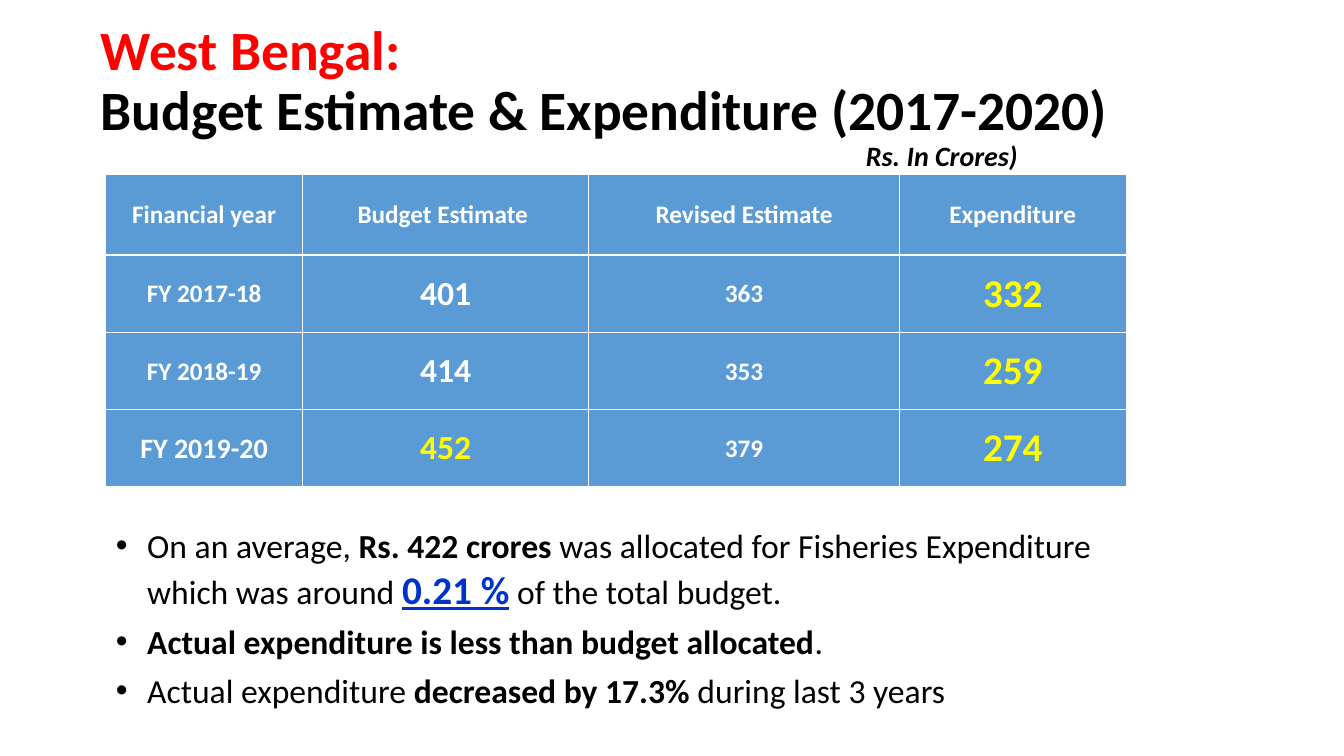
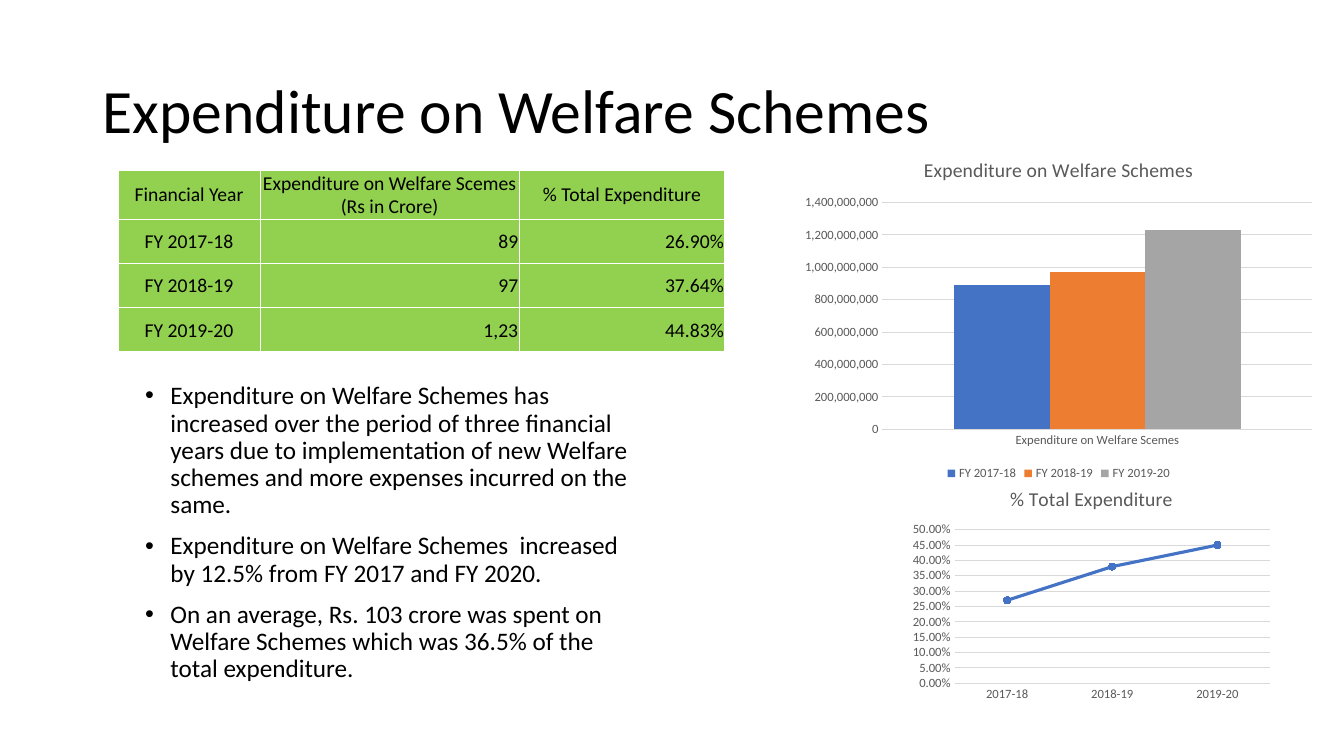
from lxml import etree
from pptx import Presentation
from pptx.chart.data import CategoryChartData
from pptx.dml.color import RGBColor
from pptx.enum.chart import (XL_CHART_TYPE, XL_LEGEND_POSITION,
                             XL_MARKER_STYLE, XL_TICK_MARK)
from pptx.enum.text import MSO_ANCHOR, MSO_AUTO_SIZE, PP_ALIGN
from pptx.oxml.ns import qn
from pptx.util import Inches, Pt

COLORS = {
    "black": "000000", "white": "FFFFFF", "red": "FF0000",
    "yellow": "FFFF00", "link": "0033CC", "sky": "5B9BD5",
    "lime": "92D050", "label": "595959", "grid": "D9D9D9",
    "blue": "4472C4", "orange": "ED7D31", "gray": "A5A5A5",
}


def color(name):
    return RGBColor.from_string(COLORS[name])


class Deck:
    """Shared style and the slide being filled."""
    font_name = "Calibri"

    def __init__(self):
        self.prs = Presentation()
        self.prs.slide_width = Inches(13.33)
        self.prs.slide_height = Inches(7.5)
        self.slide = None

    def new_slide(self):
        self.slide = self.prs.slides.add_slide(self.prs.slide_layouts[1])

    def style(self, font, size, ink="black", **flags):
        font.name = self.font_name
        font.size = Pt(size)
        font.color.rgb = color(ink)
        for flag, value in flags.items():
            setattr(font, flag, value)

    def place(self, shape, box):
        shape.left, shape.top, shape.width, shape.height = map(Inches, box)

    def title(self, box, lines, size, bold=False):
        """Lines are (text, colour) pairs."""
        heading = self.slide.shapes.title
        self.place(heading, box)
        frame = heading.text_frame
        frame.auto_size = MSO_AUTO_SIZE.NONE
        frame.vertical_anchor = MSO_ANCHOR.MIDDLE
        frame.text = "\n".join(text for text, _ in lines)
        for paragraph, (_, ink) in zip(frame.paragraphs, lines):
            paragraph.alignment = PP_ALIGN.LEFT
            paragraph.line_spacing = 0.9
            self.style(paragraph.runs[0].font, size, ink, bold=bold)

    def bullets(self, box, items, size, indent, before, spacing):
        """Each item is a list of (text, style overrides) pairs."""
        body = self.slide.placeholders[1]
        self.place(body, box)
        frame = body.text_frame
        frame.auto_size = MSO_AUTO_SIZE.NONE
        for index, item in enumerate(items):
            paragraph = frame.add_paragraph() if index else frame.paragraphs[0]
            paragraph.line_spacing = spacing
            paragraph.space_before = Pt(before)
            properties = paragraph._p.get_or_add_pPr()
            properties.set("marL", str(Inches(indent)))
            properties.set("indent", str(-Inches(indent)))
            etree.SubElement(properties, qn("a:buFont"), typeface="Arial")
            etree.SubElement(properties, qn("a:buChar"), char="•")
            for text, overrides in item:
                run = paragraph.add_run()
                run.text = text
                self.style(run.font, **{"size": size, **overrides})

    def note(self, box, text, size):
        label = self.slide.shapes.add_textbox(*map(Inches, box))
        frame = label.text_frame
        frame.word_wrap = False
        frame.auto_size = MSO_AUTO_SIZE.SHAPE_TO_FIT_TEXT
        frame.text = text
        self.style(frame.paragraphs[0].runs[0].font, size,
                   bold=True, italic=True)

    def table(self, left, top, widths, heights, rows, fill, cell_style):
        """cell_style(row, column) gives alignment and font settings."""
        grid = self.slide.shapes.add_table(
            len(rows), len(widths), Inches(left), Inches(top),
            Inches(sum(widths)), Inches(sum(heights))).table
        grid.first_row = grid.horz_banding = False
        for column, width in zip(grid.columns, widths):
            column.width = Inches(width)
        for r, (row, height) in enumerate(zip(rows, heights)):
            grid.rows[r].height = Inches(height)
            for c, text in enumerate(row):
                align, font = cell_style(r, c)
                self.cell(grid.cell(r, c), text, fill, align, font)

    def cell(self, cell, text, fill, align, font):
        cell.margin_left = cell.margin_right = cell.margin_top = Inches(0.01)
        cell.margin_bottom = 0
        cell.vertical_anchor = MSO_ANCHOR.MIDDLE
        cell.text_frame.text = text
        paragraph = cell.text_frame.paragraphs[0]
        paragraph.alignment = align
        self.style(paragraph.runs[0].font, **font)
        # Borders come before the fill in the cell properties
        properties = cell._tc.get_or_add_tcPr()
        for side in ("lnL", "lnR", "lnT", "lnB"):
            line = etree.SubElement(properties, qn(f"a:{side}"), w=str(Pt(1)))
            paint = etree.SubElement(line, qn("a:solidFill"))
            etree.SubElement(paint, qn("a:srgbClr"), val=COLORS["white"])
        cell.fill.solid()
        cell.fill.fore_color.rgb = color(fill)

    def chart(self, kind, box, title, categories, series,
              number_format, maximum, step):
        data = CategoryChartData(number_format=number_format)
        data.categories = categories
        for name, values in series:
            data.add_series(name, values)
        chart = self.slide.shapes.add_chart(
            kind, *map(Inches, box), data).chart
        self.style(chart.font, 10)
        chart.has_legend = False
        chart.has_title = True
        chart.chart_title.include_in_layout = False
        heading = chart.chart_title.text_frame
        heading.text = title
        self.style(heading.paragraphs[0].runs[0].font, 14, "label", bold=False)
        for axis in (chart.category_axis, chart.value_axis):
            axis.major_tick_mark = axis.minor_tick_mark = XL_TICK_MARK.NONE
            axis.format.line.fill.background()
            self.style(axis.tick_labels.font, 9, "label")
        scale = chart.value_axis
        scale.minimum_scale, scale.maximum_scale = 0, maximum
        scale.major_unit = step
        scale.tick_labels.number_format = number_format
        scale.tick_labels.number_format_is_linked = False
        self.line(scale.major_gridlines.format.line, "grid", 0.75)
        chart.plots[0].vary_by_categories = False
        return chart

    def line(self, line, ink, width):
        line.color.rgb = color(ink)
        line.width = Pt(width)

    def column_chart(self, inks, **content):
        chart = self.chart(XL_CHART_TYPE.COLUMN_CLUSTERED, **content)
        plot = chart.plots[0]
        plot.gap_width, plot.overlap = 150, 0
        for series, ink in zip(plot.series, inks):
            series.format.fill.solid()
            series.format.fill.fore_color.rgb = color(ink)
        chart.has_legend = True
        chart.legend.position = XL_LEGEND_POSITION.BOTTOM
        chart.legend.include_in_layout = False
        self.style(chart.legend.font, 9, "label")

    def line_chart(self, ink, **content):
        chart = self.chart(XL_CHART_TYPE.LINE_MARKERS, **content)
        self.line(chart.category_axis.format.line, "grid", 0.75)
        trend = chart.plots[0].series[0]
        trend.smooth = False
        self.line(trend.format.line, ink, 2.25)
        trend.marker.style = XL_MARKER_STYLE.CIRCLE
        trend.marker.size = 5
        trend.marker.format.fill.solid()
        trend.marker.format.fill.fore_color.rgb = color(ink)
        self.line(trend.marker.format.line, ink, 0.75)


def budget_cell(row, column):
    size = 18 if row == 0 else (18, 24, 18, 28)[column]
    if (row, column) == (3, 0):
        size = 20
    highlighted = row > 0 and column == 3 or (row, column) == (3, 1)
    ink = "yellow" if highlighted else "white"
    return PP_ALIGN.CENTER, {"size": size, "ink": ink, "bold": True}


def welfare_cell(row, column):
    align = PP_ALIGN.RIGHT if row and column else PP_ALIGN.CENTER
    return align, {"size": 14}


def budget_slide(deck):
    deck.new_slide()
    deck.title((0.9, 0.32, 11.6, 1),
               [("West Bengal:", "red"),
                ("Budget Estimate & Expenditure (2017-2020)", "black")],
               39.6, bold=True)
    bold = {"bold": True}
    deck.bullets((1.05, 5.16, 10.4, 1.95), [
        [("On an average, ", {}), ("Rs. 422 crores ", bold),
         ("was allocated for Fisheries Expenditure which was around ", {}),
         ("0.21 %", {"size": 28, "ink": "link", "bold": True,
                     "underline": True}),
         (" of the total budget.", {})],
        [("Actual expenditure is less than budget allocated", bold),
         (".", {})],
        [("Actual expenditure ", {}), ("decreased by 17.3% ", bold),
         ("during last 3 years", {})],
    ], size=24, indent=0.31, before=6, spacing=1.0)
    deck.table(1.05, 1.73, (1.95, 2.84, 3.08, 2.25), (0.8, 0.77, 0.76, 0.77), [
        ("Financial year", "Budget Estimate ", "Revised Estimate",
         "Expenditure"),
        ("FY 2017-18", "401", "363", "332"),
        ("FY 2018-19", "414", "353", "259"),
        ("FY 2019-20", "452", "379", "274"),
    ], "sky", budget_cell)
    deck.note((8.49, 1.33, 1.73, 0.44), "Rs. In Crores)", 20)


def welfare_slide(deck):
    deck.new_slide()
    deck.title((0.92, 0.4, 11.5, 1.45),
               [("Expenditure on Welfare Schemes", "black")], 44)
    findings = (
        "Expenditure on Welfare Schemes has increased over the period of "
        "three financial years due to implementation of new Welfare schemes "
        "and more expenses incurred on the same.",
        "Expenditure on Welfare Schemes  increased by 12.5% from FY 2017 "
        "and FY 2020.",
        "On an average, Rs. 103 crore was spent on Welfare Schemes which "
        "was 36.5% of the total expenditure.",
    )
    deck.bullets((1.34, 3.75, 5.03, 3.2), [[(text, {})] for text in findings],
                 size=18, indent=0.25, before=10, spacing=0.9)
    deck.table(1.17, 1.69, (1.41, 2.57, 2.04), (0.44,) * 4, [
        ("Financial Year", "Expenditure on Welfare Scemes (Rs in Crore)",
         "% Total Expenditure"),
        ("FY 2017-18", "89", "26.90%"),
        ("FY 2018-19", "97", "37.64%"),
        ("FY 2019-20", "1,23", "44.83%"),
    ], "lime", welfare_cell)
    deck.column_chart(
        ("blue", "orange", "gray"), box=(7.88, 1.39, 5.24, 3.42),
        title="Expenditure on Welfare Schemes",
        categories=["Expenditure on Welfare Scemes"],
        series=[("FY 2017-18", [890000000]), ("FY 2018-19", [970000000]),
                ("FY 2019-20", [1230000000])],
        number_format="#,##0", maximum=1400000000, step=200000000)
    deck.line_chart(
        "blue", box=(8.98, 4.68, 3.69, 2.33), title="% Total Expenditure",
        categories=["2017-18", "2018-19", "2019-20"],
        series=[("% Total Expenditure", [0.27, 0.38, 0.45])],
        number_format="0.00%", maximum=0.5, step=0.05)


def main():
    deck = Deck()
    budget_slide(deck)
    welfare_slide(deck)
    deck.prs.save("out.pptx")


if __name__ == "__main__":
    main()
